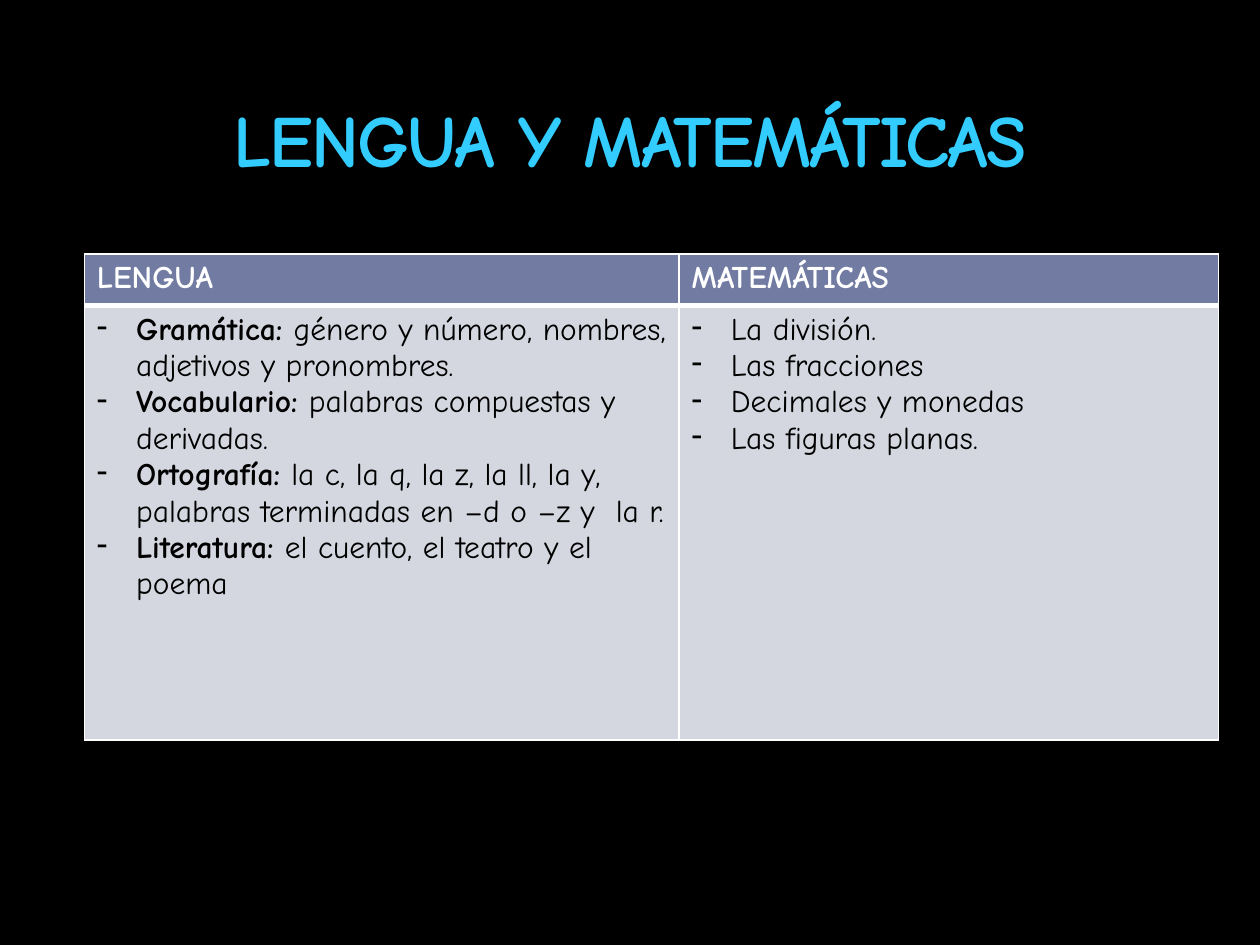
import pptx
import pptx.dml.color
import pptx.enum.text
import pptx.oxml
import pptx.oxml.ns
import pptx.util
from pptx.util import Cm

COLORS = {
    "background": "000000",
    "title": "33CCFF",
    "header": "727CA3",
    "body": "D5D7E0",
    "border": "FFFFFF",
    "header_text": "FFFFFF",
    "body_text": "000000",
}
HEADERS = ["LENGUA", "MATEMÁTICAS"]
# Each item is a bold lead and the plain text after it.
TOPICS = [
    [
        ("Gramática: ", "género y número, nombres, adjetivos y pronombres."),
        ("Vocabulario: ", "palabras compuestas y derivadas."),
        ("Ortografía: ", "la c, la q, la z, la ll, la y, "
                         "palabras terminadas en –d o –z y  la r."),
        ("Literatura: ", "el cuento, el teatro y el poema"),
    ],
    [
        ("", "La división."),
        ("", "Las fracciones"),
        ("", "Decimales y monedas"),
        ("", "Las figuras planas."),
    ],
]


def rgb(name):
    return pptx.dml.color.RGBColor.from_string(COLORS[name])


class SlideBuilder:
    font = "Comic Neue"
    text_size = 18
    indent = Cm(0.79)

    def __init__(self, prs):
        self.s = prs.slides.add_slide(prs.slide_layouts[5])
        fill = self.s.background.fill
        fill.solid()
        fill.fore_color.rgb = rgb("background")

    def style(self, r, color, bold, size=text_size):
        r.font.name = self.font
        r.font.size = pptx.util.Pt(size)
        r.font.bold = bold
        r.font.color.rgb = rgb(color)

    def title(self, text, left, top, width, height):
        sp = self.s.shapes.title
        sp.left, sp.top, sp.width, sp.height = left, top, width, height
        tf = sp.text_frame
        tf.text = text
        tf.vertical_anchor = pptx.enum.text.MSO_ANCHOR.BOTTOM
        p = tf.paragraphs[0]
        p.alignment = pptx.enum.text.PP_ALIGN.CENTER
        r = p.runs[0]
        self.style(r, "title", True, 42)
        r.font._element.set("spc", "-100")

    def table(self, left, top, col_widths, row_heights):
        frame = self.s.shapes.add_table(
            len(row_heights), len(col_widths), left, top,
            sum(col_widths), sum(row_heights))
        table = frame.table
        for col, width in zip(table.columns, col_widths):
            col.width = width
        for row, height in zip(table.rows, row_heights):
            row.height = height
        return table

    def header_cell(self, cell, text):
        cell.text_frame.text = text
        self.style(cell.text_frame.paragraphs[0].runs[0], "header_text", True)
        self.paint(cell, "header", bottom=3)

    def list_cell(self, cell, items):
        tf = cell.text_frame
        for i, (lead, rest) in enumerate(items):
            p = tf.add_paragraph() if i else tf.paragraphs[0]
            self.dash(p)
            for text, bold in ((lead, True), (rest, False)):
                if text:
                    r = p.add_run()
                    r.text = text
                    self.style(r, "body_text", bold)
        self.paint(cell, "body", top=3)

    def dash(self, p):
        """Give a paragraph a hanging dash as its bullet."""
        pPr = p._p.get_or_add_pPr()
        pPr.set("marL", str(self.indent))
        pPr.set("indent", str(-self.indent))
        pPr.append(pptx.oxml.parse_xml(
            f'<a:buChar {pptx.oxml.ns.nsdecls("a")} char="-"/>'))

    def paint(self, cell, color, top=1, bottom=1):
        """Fill a cell and draw its borders, with widths in points."""
        cell.fill.solid()
        cell.fill.fore_color.rgb = rgb(color)
        sides = {"lnL": 1, "lnR": 1, "lnT": top, "lnB": bottom}
        for i, (side, width) in enumerate(sides.items()):
            cell._tc.get_or_add_tcPr().insert(i, pptx.oxml.parse_xml(
                f'<a:{side} {pptx.oxml.ns.nsdecls("a")} '
                f'w="{pptx.util.Pt(width)}"><a:solidFill>'
                f'<a:srgbClr val="{COLORS["border"]}"/>'
                f'</a:solidFill></a:{side}>'))


def main():
    prs = pptx.Presentation()
    prs.slide_width, prs.slide_height = Cm(25.4), Cm(19.05)
    builder = SlideBuilder(prs)
    builder.title("LENGUA Y MATEMÁTICAS",
                  Cm(1.27), Cm(0.43), Cm(22.86), Cm(3.38))
    table = builder.table(Cm(1.7), Cm(5.12),
                          [Cm(11.99), Cm(10.87)], [Cm(1.04), Cm(8.76)])
    for col, (header, items) in enumerate(zip(HEADERS, TOPICS)):
        builder.header_cell(table.cell(0, col), header)
        builder.list_cell(table.cell(1, col), items)
    prs.save("out.pptx")


if __name__ == "__main__":
    main()
